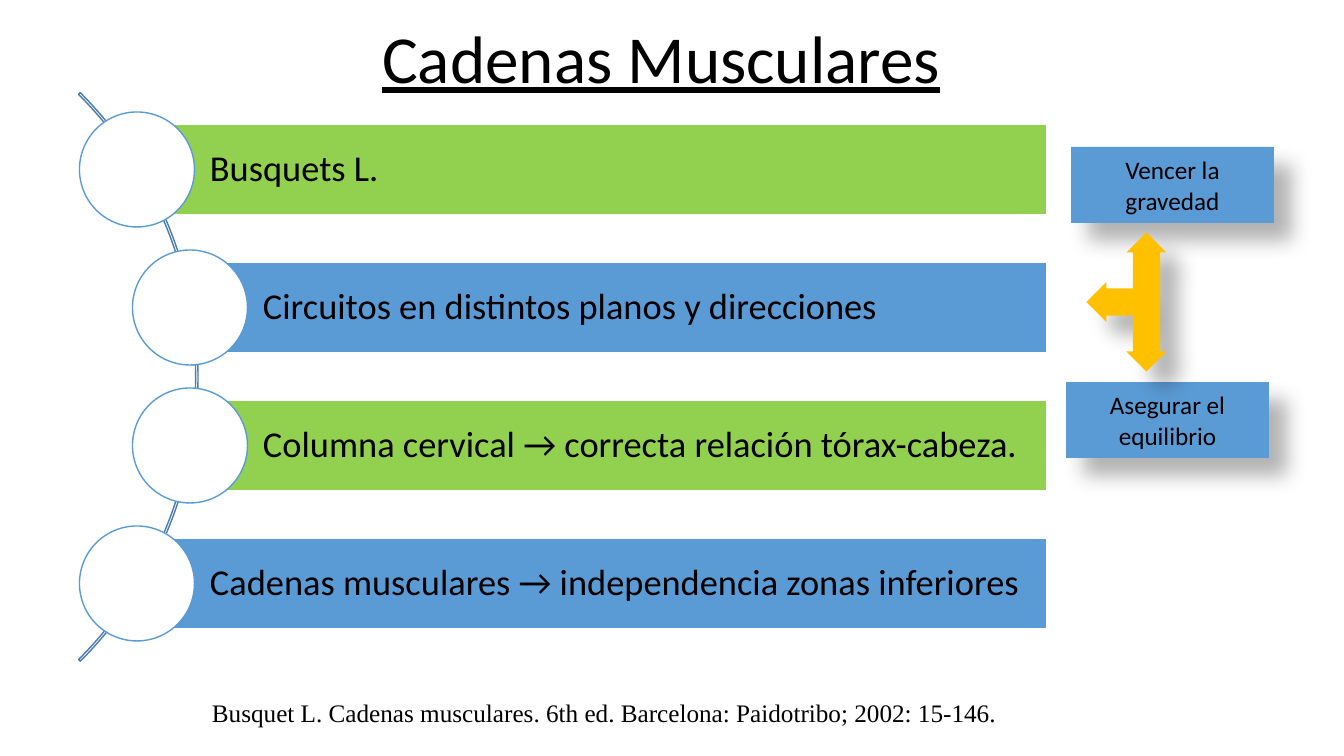
from lxml.etree import SubElement
from pptx import Presentation
from pptx.dml.color import RGBColor
from pptx.enum.shapes import MSO_SHAPE
from pptx.enum.text import MSO_ANCHOR, MSO_AUTO_SIZE, PP_ALIGN
from pptx.oxml.ns import qn
from pptx.util import Emu, Pt

TITLE = "Cadenas Musculares"
CITATION = "Busquet L. Cadenas musculares. 6th ed. Barcelona: Paidotribo; 2002: 15-146."
BARS = [
    ("Busquets L.", 137, "green"),
    ("Circuitos en distintos planos y direcciones", 190, "blue"),
    ("Columna cervical → correcta relación tórax-cabeza.", 190, "green"),
    ("Cadenas musculares → independencia zonas inferiores", 137, "blue"),
]
GOALS = [
    ("Vencer la gravedad", 1071, 147),
    ("Asegurar el equilibrio", 1066, 382),
]
COLORS = {
    "black": "000000",
    "white": "FFFFFF",
    "green": "92D050",
    "blue": "5B9BD5",
    "arc": "497CAB",
    "amber": "FFC000",
}
FONTS = {
    "title": {"name": "Calibri", "size": Pt(48), "underline": True, "bold": False},
    "bar": {"name": "Calibri", "size": Pt(26)},
    "goal": {"name": "Calibri", "size": Pt(18)},
    "citation": {"name": "Times New Roman", "size": Pt(18)},
}
FRAMES = {
    "title": {"vertical_anchor": MSO_ANCHOR.TOP},
    "bar": {"vertical_anchor": MSO_ANCHOR.MIDDLE, "margin_left": 73,
            "margin_top": 7, "margin_right": 7, "margin_bottom": 7},
    "goal": {"vertical_anchor": MSO_ANCHOR.MIDDLE},
    "citation": {"vertical_anchor": MSO_ANCHOR.TOP},
}
PARAGRAPHS = {
    "title": {"alignment": PP_ALIGN.LEFT, "line_spacing": 1.0},
    "bar": {"alignment": PP_ALIGN.LEFT, "line_spacing": 0.9},
    "goal": {"alignment": PP_ALIGN.CENTER},
    "citation": {"alignment": PP_ALIGN.LEFT},
}
SCALE = 914400 / 100.8
BAR_TOP, BAR_PITCH, BAR_HEIGHT, BAR_RIGHT = 124, 138, 91, 1047
CIRCLE = 115
GOAL_SIZE = (203, 76)


def px(length):
    return Emu(round(length * SCALE))


def box(*lengths):
    return [px(length) for length in lengths]


def rgb(color):
    return RGBColor.from_string(COLORS[color])


def write(shape, text, style):
    frame = shape.text_frame
    frame.text = text
    frame.word_wrap = True
    frame.auto_size = MSO_AUTO_SIZE.NONE
    for name, value in FRAMES[style].items():
        setattr(frame, name, px(value) if name.startswith("margin") else value)
    paragraph = frame.paragraphs[0]
    for name, value in PARAGRAPHS[style].items():
        setattr(paragraph, name, value)
    font = paragraph.runs[0].font
    for name, value in FONTS[style].items():
        setattr(font, name, value)
    font.color.rgb = rgb("black")


def add_shape(kind, bounds, fill=None, line=None):
    shape = slide.shapes.add_shape(kind, *box(*bounds))
    shape.shadow.inherit = False
    if fill:
        shape.fill.solid()
        shape.fill.fore_color.rgb = rgb(fill)
    else:
        shape.fill.background()
    if line:
        shape.line.color.rgb = rgb(line)
        shape.line.width = Pt(1)
    else:
        shape.line.fill.background()
    return shape


def add_shadow(shape):
    effects = shape.element.spPr.find(qn("a:effectLst"))
    shadow = SubElement(effects, qn("a:outerShdw"), blurRad=str(Pt(15)),
                        dist=str(Pt(18)), dir="2700000", algn="tl", rotWithShape="0")
    color = SubElement(shadow, qn("a:srgbClr"), val=COLORS["black"])
    SubElement(color, qn("a:alpha"), val="30000")


def adjust(shape, values):
    for index, value in enumerate(values):
        shape.adjustments[index] = value


presentation = Presentation()
presentation.slide_width, presentation.slide_height = box(1344, 756)
slide = presentation.slides.add_slide(presentation.slide_layouts[5])

title = slide.shapes.title
title.left, title.top, title.width, title.height = box(372, 11, 636, 173)
write(title, TITLE, "title")

citation = slide.shapes.add_textbox(*box(202, 692, 925, 40))
write(citation, CITATION, "citation")

arc = add_shape(MSO_SHAPE.BLOCK_ARC, (-606, -25, 804, 804), line="arc")
adjust(arc, (189, 27, 0.003))

for row, (text, left, color) in enumerate(BARS):
    top = BAR_TOP + row * BAR_PITCH
    bar = add_shape(MSO_SHAPE.RECTANGLE, (left, top, BAR_RIGHT - left, BAR_HEIGHT),
                    color, "white")
    write(bar, text, "bar")
    circle_top = top + (BAR_HEIGHT - CIRCLE) / 2
    add_shape(MSO_SHAPE.OVAL, (left - CIRCLE / 2, circle_top, CIRCLE, CIRCLE),
              "white", "blue")

for text, left, top in GOALS:
    goal = add_shape(MSO_SHAPE.RECTANGLE, (left, top, *GOAL_SIZE), "blue")
    add_shadow(goal)
    write(goal, text, "goal")

arrow = add_shape(MSO_SHAPE.LEFT_RIGHT_UP_ARROW, (1057, 262, 139, 80), "amber")
arrow.rotation = 270
adjust(arrow, (0.34, 0.25, 0.25))
add_shadow(arrow)

presentation.save("out.pptx")
